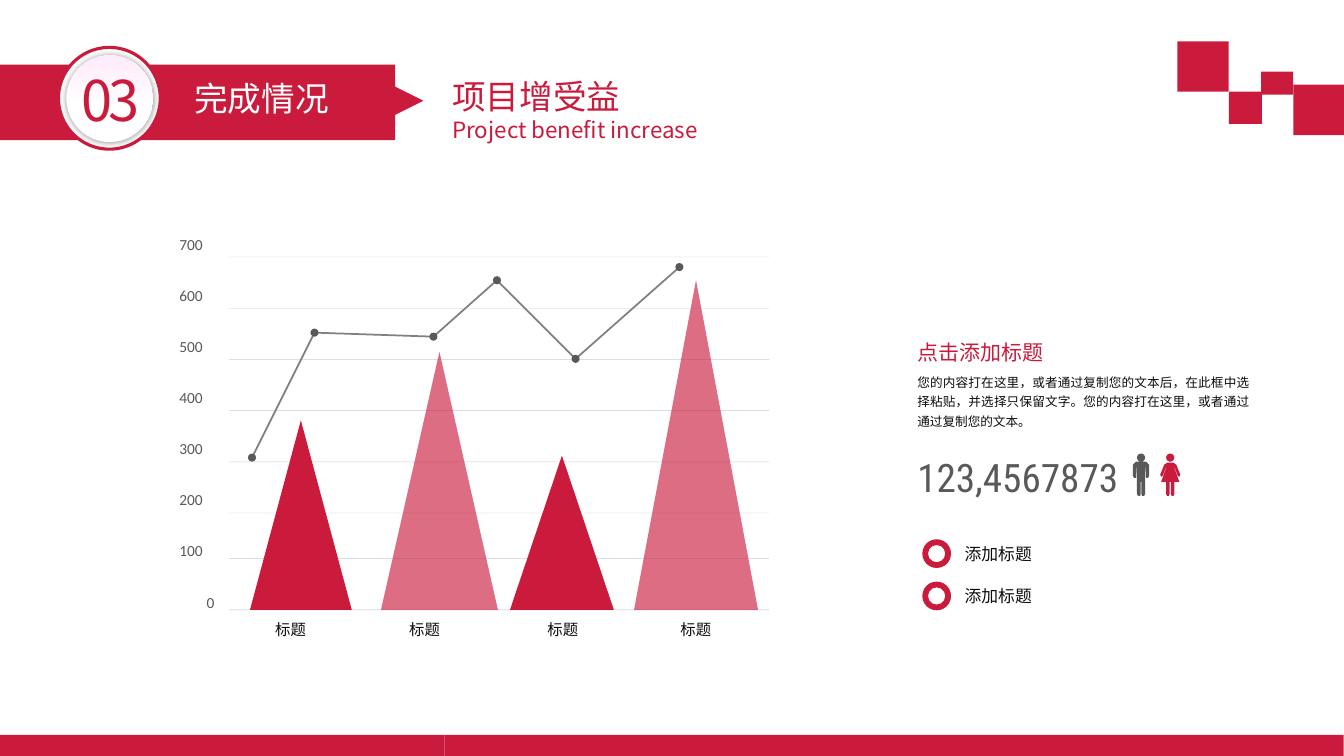
from math import cos, pi, sin

from lxml.etree import SubElement
from pptx import Presentation
from pptx.dml.color import RGBColor
from pptx.enum.shapes import MSO_CONNECTOR, MSO_SHAPE
from pptx.enum.text import MSO_AUTO_SIZE, PP_ALIGN
from pptx.oxml.ns import qn
from pptx.util import Inches, Pt

CELL = Inches(0.1)  # the slide is a grid of 133.3 columns by 75 rows
COLORS = {"red": "CB1B3D", "dark": "595959", "trend": "808080",
          "ink": "0D0D0D", "white": "FFFFFF", "blush": "FFEBFA"}
CJK = "Noto Sans CJK SC"
WIDE_INSETS = (1, 0.5)
INSETS = (0.8, 0.4)

GRID_ROWS = [25.5 + 5.08 * step for step in range(6)] + [55.4]
BASELINE = 60.5
PEAKS = [(24.8, 10.1, 41.7, None), (37.8, 11.6, 34.9, 64),
         (50.6, 10.3, 45.2, None), (62.9, 12.3, 27.8, 64)]
TREND = [(25, 45.4), (31.2, 33), (43, 33.4), (49.3, 27.8), (57.1, 35.6), (67.4, 26.5)]
# Right half of each figure, from neck to crotch: distance from the axis, depth
MAN = [(0.5, 0.8), (0.8, 1.1), (0.8, 2.2), (0.7, 2.4), (0.5, 2.4), (0.45, 1.4),
       (0.4, 1.4), (0.4, 4), (0.3, 4.2), (0.1, 4.2), (0.03, 4), (0.03, 2.8)]
WOMAN = [(0.3, 0.9), (0.6, 1.1), (1, 2.1), (0.9, 2.3), (0.75, 2.2), (0.45, 1.4),
         (0.4, 1.4), (0.9, 2.8), (0.42, 2.8), (0.42, 4), (0.32, 4.2), (0.15, 4.2),
         (0.06, 4), (0.06, 2.8)]


def cells(*counts):
    return [round(count * CELL) for count in counts]


def rgb(color):
    return RGBColor.from_string(COLORS[color])


def set_alpha(fill_owner, percent):
    """Make the solid colour found inside an element partly transparent."""
    tint = next(fill_owner.iter(qn("a:srgbClr")))
    SubElement(tint, qn("a:alpha")).set("val", str(percent * 1000))


def paint(shape, color, alpha=None):
    shape.shadow.inherit = False
    shape.line.fill.background()
    shape.fill.solid()
    shape.fill.fore_color.rgb = rgb(color)
    if alpha:
        set_alpha(shape._element.spPr, alpha)
    return shape


def add_preset(slide, kind, box, color="red"):
    return paint(slide.shapes.add_shape(kind, *cells(*box)), color)


def add_outline(slide, contours, color, alpha=None):
    first, *others = [[cells(*point) for point in contour] for contour in contours]
    builder = slide.shapes.build_freeform(*first[0])
    builder.add_line_segments(first[1:], close=True)
    for contour in others:
        builder.move_to(*contour[0])
        builder.add_line_segments(contour[1:], close=True)
    paint(builder.convert_to_shape(), color, alpha)


def add_line(slide, start, end, color, width, alpha=None):
    line = slide.shapes.add_connector(MSO_CONNECTOR.STRAIGHT, *cells(*start, *end))
    line.line.color.rgb = rgb(color)
    line.line.width = Pt(width)
    properties = line._element.spPr
    if alpha:
        set_alpha(properties, alpha)
    SubElement(properties, qn("a:effectLst"))


def add_text(slide, box, lines, color="ink", font=CJK, insets=INSETS,
             spacing=None, align=None, tracking=None):
    """Write lines given as (words, size) pairs, one paragraph each."""
    frame = slide.shapes.add_textbox(*cells(*box)).text_frame
    frame.word_wrap = True
    frame.auto_size = MSO_AUTO_SIZE.SHAPE_TO_FIT_TEXT
    frame.margin_left, frame.margin_top = cells(*insets)
    frame.margin_right, frame.margin_bottom = cells(*insets)
    for index, (words, size) in enumerate(lines):
        paragraph = frame.add_paragraph() if index else frame.paragraphs[0]
        paragraph.alignment = align
        paragraph.line_spacing = spacing
        run = paragraph.add_run()
        run.text = words
        run.font.size = Pt(size)
        run.font.color.rgb = rgb(color)
        run.font.name = font
        properties = run.font._element
        SubElement(properties, qn("a:ea")).set("typeface", font)
        if tracking:
            properties.set("spc", str(tracking * 100))


def add_person(slide, axis, half, color):
    top = 45
    body = [(axis + x, top + y) for x, y in half]
    body += [(axis - x, top + y) for x, y in reversed(half)]
    turns = [pi * step / 12 for step in range(24)]
    head = [(axis + 0.4 * cos(turn), top + 0.4 + 0.4 * sin(turn)) for turn in turns]
    add_outline(slide, [head, body], color)


def add_axes(slide):
    for row in GRID_ROWS:
        add_line(slide, (22.7, row), (76.3, row), "dark", 0.25, 30)
    add_line(slide, (22.7, BASELINE), (76.3, BASELINE), "dark", 0.25, 40)
    for step in range(8):
        left, width = (17, 4.6) if step else (19.7, 2.6)
        add_text(slide, (left, 58.4 - 5.07 * step, width, 2.6),
                 [(str(step * 100), 11)], "dark", "Calibri")
    for left in (26.5, 39.8, 53.5, 66.7):
        add_text(slide, (left, 61.1, 5.2, 2.6), [("标题", 11)])


def add_peaks_and_trend(slide):
    for left, width, top, alpha in PEAKS:
        add_outline(slide, [[(left, BASELINE), (left + width / 2, top),
                             (left + width, BASELINE)]], "red", alpha)
    for start, end in zip(TREND, TREND[1:]):
        add_line(slide, start, end, "trend", 1.25)
    for x, y in TREND:
        add_preset(slide, MSO_SHAPE.OVAL, (x - 0.4, y - 0.4, 0.8, 0.8), "dark")


def add_summary(slide):
    add_text(slide, (90.2, 36.3, 34.5, 6.7),
             [("您的内容打在这里，或者通过复制您的文本后，在此框中选择粘贴，并选择只保留文字。"
               "您的内容打在这里，或者通过通过复制您的文本。", 9)],
             spacing=1.3, align=PP_ALIGN.JUSTIFY)
    add_text(slide, (90.2, 32.4, 15, 3.3), [("点击添加标题", 15)], "red",
             insets=(0.8, 0), spacing=1.5)
    add_text(slide, (90.2, 44.6, 22.6, 5.5), [("123,4567873", 28)], "dark",
             "Roboto Condensed")
    add_person(slide, 113.2, MAN, "dark")
    add_person(slide, 116.1, WOMAN, "red")
    for top in (53.5, 57.7):
        ring = add_preset(slide, MSO_SHAPE.DONUT, (91.5, top, 2.85, 2.85))
        ring.adjustments[0] = 0.2
        add_text(slide, (94.9, top, 8.8, 2.8), [("添加标题", 12)])


def add_badge(slide):
    rim = add_preset(slide, MSO_SHAPE.OVAL, (5.8, 4.7, 10.1, 10.1), "white")
    rim.line.color.rgb = rgb("red")
    rim.line.width = Pt(2.25)
    face = add_preset(slide, MSO_SHAPE.OVAL, (6.6, 5.5, 8.6, 8.6), "white")
    face.fill.gradient()
    face.fill.gradient_angle = 90
    for stop, color, position in zip(face.fill.gradient_stops, ("white", "blush"), (0.4, 1)):
        stop.color.rgb = rgb(color)
        stop.position = position
    effects = face._element.spPr.find(qn("a:effectLst"))
    glow = SubElement(effects, qn("a:outerShdw"), blurRad=str(Pt(5)), dist="0", dir="0")
    SubElement(glow, qn("a:srgbClr"), val="000000")
    set_alpha(glow, 40)
    add_text(slide, (7.1, 6, 9.7, 7.7), [("03", 40)], "red", insets=WIDE_INSETS,
             tracking=-3)


def add_header(slide):
    add_preset(slide, MSO_SHAPE.RECTANGLE, (-0.3, 6.4, 39.5, 7.5))
    add_preset(slide, MSO_SHAPE.ISOSCELES_TRIANGLE, (39.2, 8.6, 2.8, 2.8)).rotation = 90
    add_badge(slide)
    add_text(slide, (18.3, 7.2, 20.8, 5), [("完成情况", 24)], "white",
             insets=WIDE_INSETS)
    add_text(slide, (43.9, 7, 29.4, 7.7),
             [("项目增受益", 24), ("Project benefit increase", 16)], "red",
             insets=WIDE_INSETS)


def add_decoration(slide):
    corner_blocks = [(128.3, 8.4, 5.1, 5), (116.8, 4.1, 5.1, 5),
                     (121.9, 9.1, 3.3, 3.2), (125.1, 7.1, 3.2, 2.3)]
    footer_blocks = [(-0.5 + 44.6 * column, 72.9, 44.6, 2.9) for column in range(3)]
    for block in corner_blocks + footer_blocks:
        add_preset(slide, MSO_SHAPE.RECTANGLE, block)


def main():
    deck = Presentation()
    deck.slide_width, deck.slide_height = cells(133.33, 75)
    slide = deck.slides.add_slide(deck.slide_layouts[6])
    add_axes(slide)
    add_summary(slide)
    add_peaks_and_trend(slide)
    add_header(slide)
    add_decoration(slide)
    deck.save("out.pptx")


if __name__ == "__main__":
    main()
